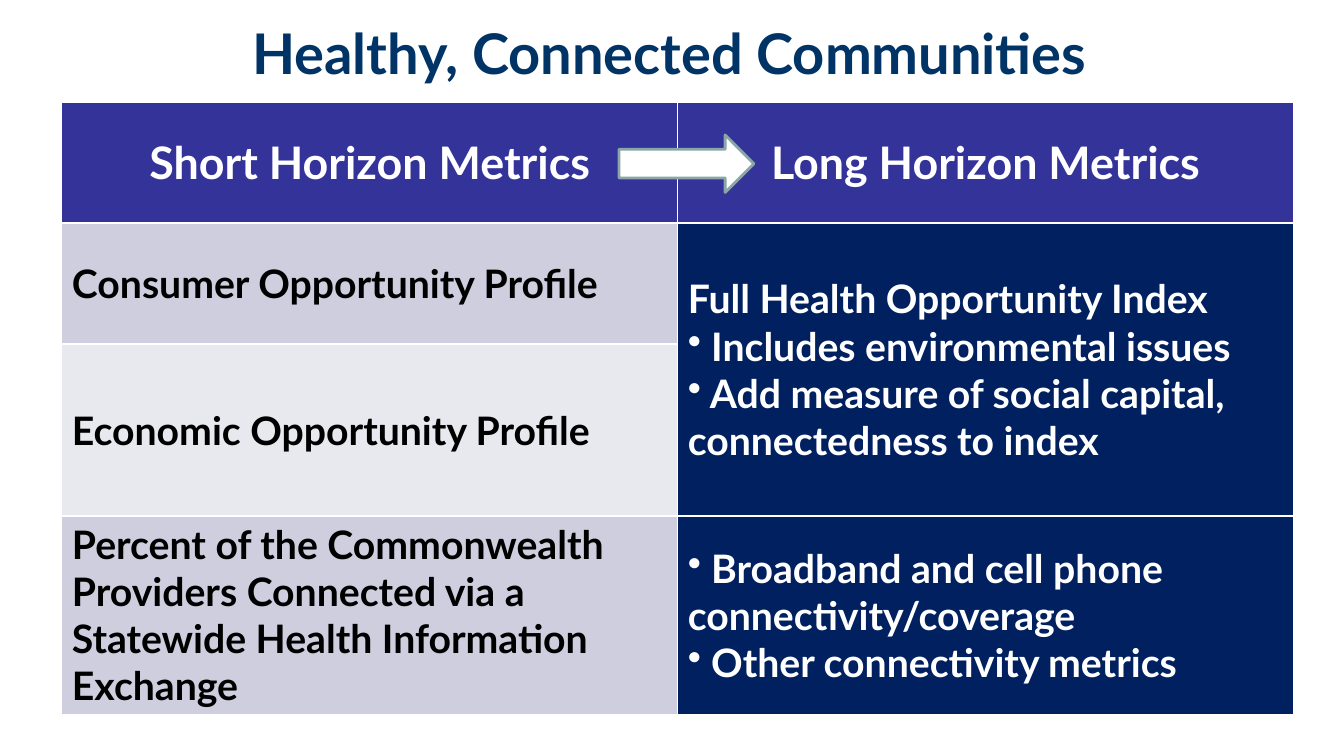
"""Build the Healthy, Connected Communities metrics slide."""
from lxml import etree
from pptx import Presentation
from pptx.dml.color import RGBColor
from pptx.enum.shapes import MSO_SHAPE
from pptx.enum.text import MSO_ANCHOR, PP_ALIGN
from pptx.oxml.ns import qn
from pptx.util import Cm, Pt

CENTER, LEFT = PP_ALIGN.CENTER, PP_ALIGN.LEFT
MIDDLE = MSO_ANCHOR.MIDDLE
RIGHT_ARROW = MSO_SHAPE.RIGHT_ARROW
WHITE, BLACK, TITLE = "FFFFFF", "000000", "003366"
HEADER, NAVY, BAND, PALE = "333399", "002060", "CECEDE", "E8E8EF"


def rgb(value):
    return RGBColor.from_string(value)


def write(tf, lines, size, color, align):
    tf.text = "\n".join(lines)
    tf.word_wrap = True
    for p in tf.paragraphs:
        p.alignment = align
        if p.text.startswith(" "):
            pPr = p._p.get_or_add_pPr()
            pPr.set("marL", "0")
            pPr.set("indent", "0")
            etree.SubElement(pPr, qn("a:buChar")).set("char", "•")
        for r in p.runs:
            r.font.name = "Lato"
            r.font.size = Pt(size)
            r.font.bold = True
            r.font.color.rgb = rgb(color)


prs = Presentation()
prs.slide_width, prs.slide_height = Cm(33.87), Cm(19.05)
s = prs.slides.add_slide(prs.slide_layouts[6])

title = s.shapes.add_textbox(Cm(1.63), Cm(0), Cm(30.48), Cm(2.62))
title.text_frame.vertical_anchor = MIDDLE
write(title.text_frame, ["Healthy, Connected Communities"], 40, TITLE, CENTER)

row_heights = [3.05, 3.05, 4.33, 4.98]
table = s.shapes.add_table(4, 2, Cm(1.56), Cm(2.57), Cm(31.04), Cm(sum(row_heights))).table
for row, height in zip(table.rows, row_heights):
    row.height = Cm(height)
table.cell(1, 1).merge(table.cell(2, 1))

cells = [
    (0, 0, HEADER, WHITE, ["Short Horizon Metrics"]),
    (0, 1, HEADER, WHITE, ["Long Horizon Metrics"]),
    (1, 0, BAND, BLACK, ["Consumer Opportunity Profile"]),
    (1, 1, NAVY, WHITE, ["Full Health Opportunity Index",
                         " Includes environmental issues",
                         " Add measure of social capital, connectedness to index"]),
    (2, 0, PALE, BLACK, ["Economic Opportunity Profile"]),
    (3, 0, BAND, BLACK, ["Percent of the Commonwealth Providers Connected via a "
                         "Statewide Health Information Exchange"]),
    (3, 1, NAVY, WHITE, [" Broadband and cell phone connectivity/coverage",
                         " Other connectivity metrics"]),
]
for row, col, fill, color, lines in cells:
    cell = table.cell(row, col)
    cell.fill.solid()
    cell.fill.fore_color.rgb = rgb(fill)
    cell.vertical_anchor = MIDDLE
    size, align = (32, CENTER) if row == 0 else (28, LEFT)
    write(cell.text_frame, lines, size, color, align)

arrow = s.shapes.add_shape(RIGHT_ARROW, Cm(15.6), Cm(3.4), Cm(3.4), Cm(1.45))
arrow.shadow.inherit = False
arrow.fill.solid()
arrow.fill.fore_color.rgb = rgb(WHITE)
arrow.line.color.rgb = rgb("8AA6A8")
arrow.line.width = Pt(2)

prs.save("out.pptx")
